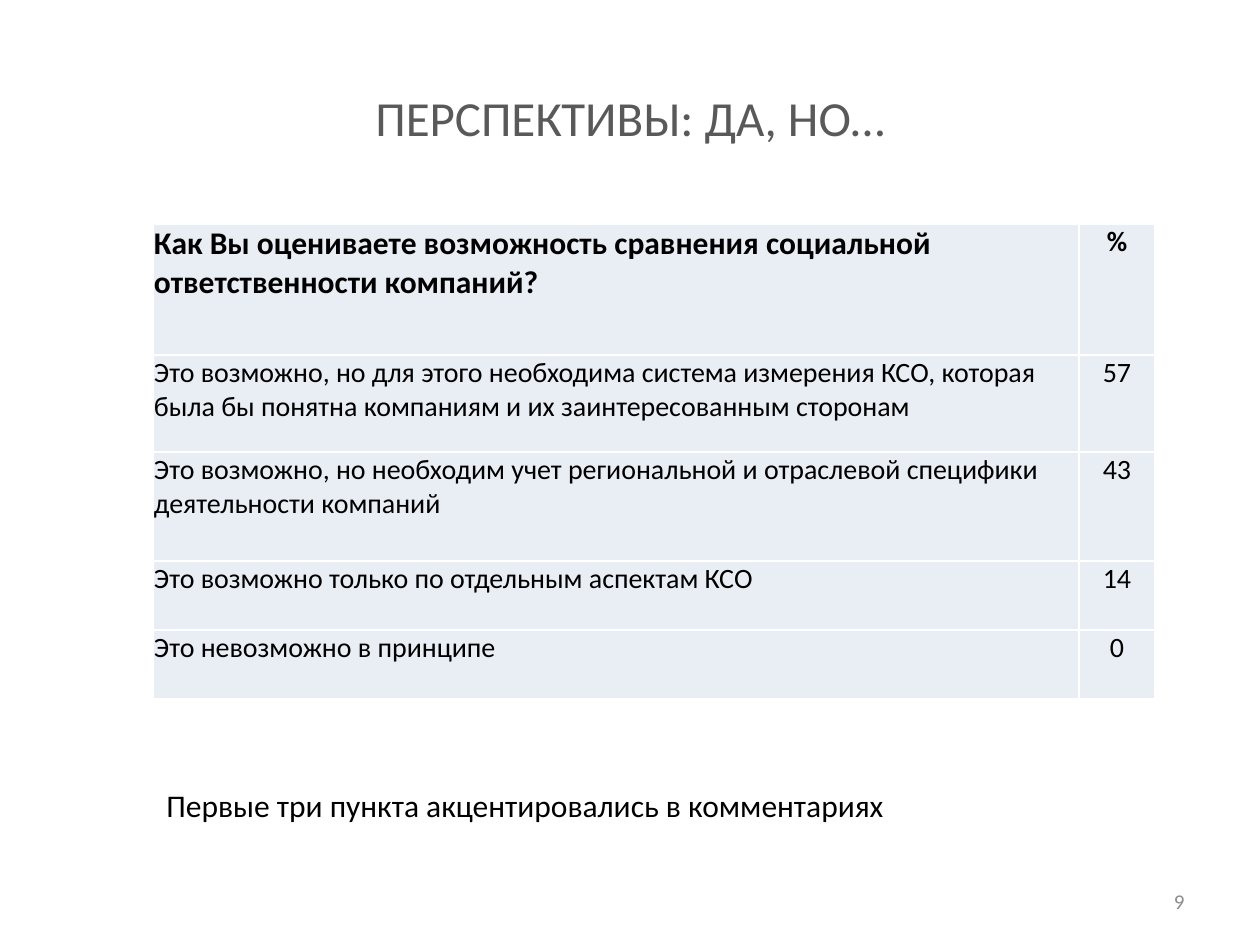
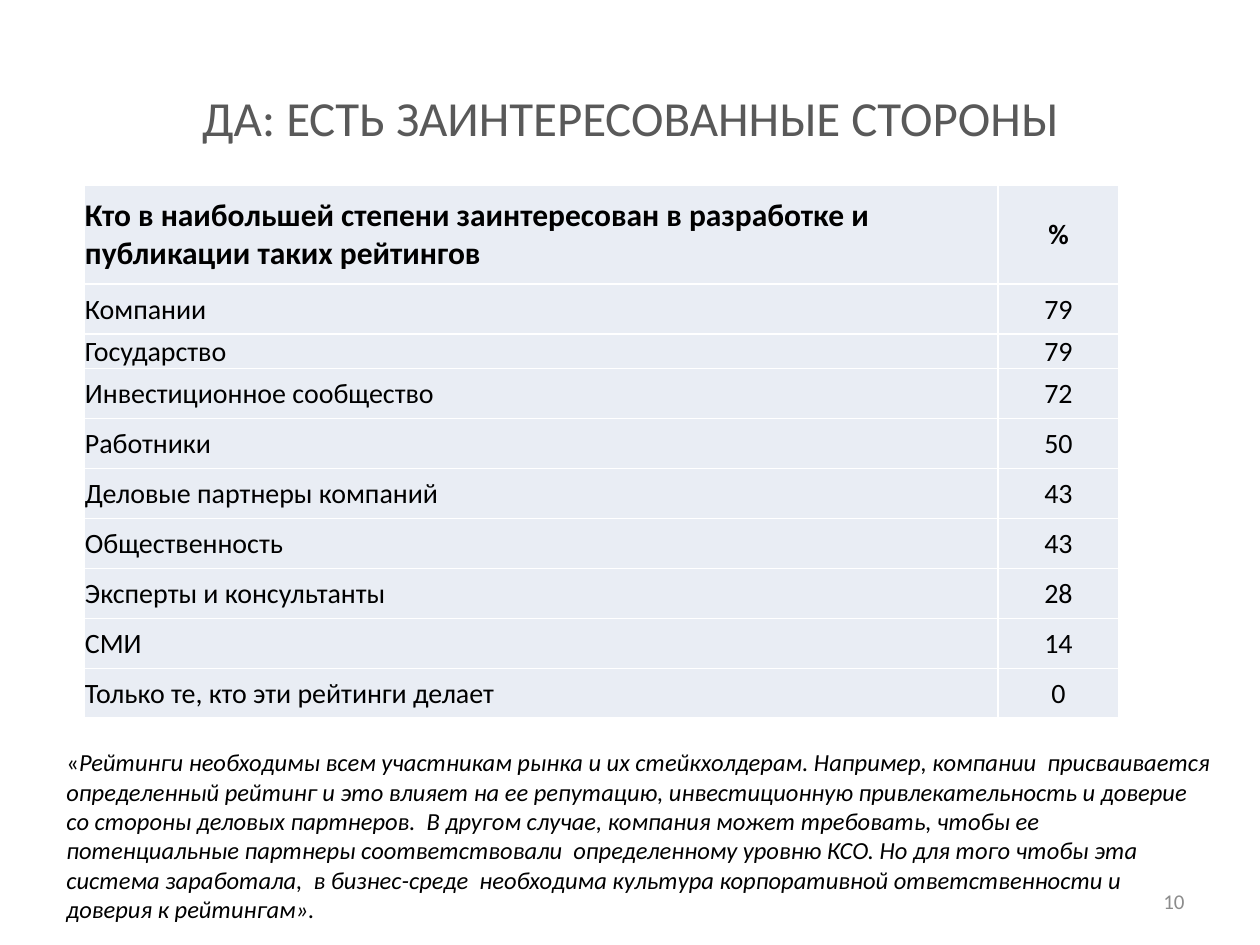
"""Build two survey slides, each with a title, a results table, a comment and a page number."""
from lxml import etree
from pptx import Presentation
from pptx import util as u
from pptx.dml import color
from pptx.enum import text
from pptx.oxml import ns

PX = 7257
FONT = "Calibri"
BLACK, TITLE_GREY, PAGE_GREY = "000000", "595959", "8C8C8C"
CELL_FILL, BORDER = "E9EDF4", "FFFFFF"
LEFT, CENTER, RIGHT = text.PP_ALIGN.LEFT, text.PP_ALIGN.CENTER, text.PP_ALIGN.RIGHT
TOP, MIDDLE = text.MSO_ANCHOR.TOP, text.MSO_ANCHOR.MIDDLE


def rgb(hex_value):
    return color.RGBColor.from_string(hex_value)


def write(frame, words, size=16, fill=BLACK, bold=False, italic=False, align=LEFT):
    paragraph = frame.paragraphs[0]
    paragraph.alignment = align
    run = paragraph.add_run()
    run.text = words
    run.font.name, run.font.size = FONT, u.Pt(size)
    run.font.bold, run.font.italic = bold, italic
    run.font.color.rgb = rgb(fill)


pages = [
    dict(
        number="9",
        title="ПЕРСПЕКТИВЫ: ДА, НО…",
        table_at=(153, 224),
        columns=(926, 76),
        heights=(131, 97, 109, 69, 69),
        anchor=TOP,
        rows=[
            ("Как Вы оцениваете возможность сравнения социальной ответственности компаний?", "%"),
            ("Это возможно, но для этого необходима система измерения КСО, которая была бы "
             "понятна компаниям и их заинтересованным сторонам", "57"),
            ("Это возможно, но необходим учет региональной и отраслевой специфики "
             "деятельности компаний", "43"),
            ("Это возможно только по отдельным аспектам КСО", "14"),
            ("Это невозможно в принципе", "0"),
        ],
        comment_at=(154, 780, 751, 50),
        comment_wrap=False,
        comment_size=18,
        comment=[("Первые три пункта акцентировались в комментариях", False)],
    ),
    dict(
        number="10",
        title="ДА: ЕСТЬ ЗАИНТЕРЕСОВАННЫЕ СТОРОНЫ",
        table_at=(84, 185),
        columns=(914, 121),
        heights=(99, 50, 6) + (50,) * 7,
        anchor=MIDDLE,
        rows=[
            ("Кто в наибольшей степени заинтересован в разработке и публикации таких рейтингов", "%"),
            ("Компании", "79"),
            ("Государство", "79"),
            ("Инвестиционное сообщество", "72"),
            ("Работники", "50"),
            ("Деловые партнеры компаний", "43"),
            ("Общественность", "43"),
            ("Эксперты и консультанты", "28"),
            ("СМИ", "14"),
            ("Только те, кто эти рейтинги делает", "0"),
        ],
        comment_at=(54, 741, 1171, 229),
        comment_wrap=True,
        comment_size=14,
        comment=[
            ("«", False),
            ("Рейтинги необходимы всем участникам рынка и их стейкхолдерам. Например, компании  "
             "присваивается определенный рейтинг и это влияет на ее репутацию, инвестиционную "
             "привлекательность и доверие со стороны деловых партнеров.  В другом случае, компания "
             "может требовать, чтобы ее потенциальные партнеры соответствовали  определенному "
             "уровню КСО. Но для того чтобы эта система заработала,  в бизнес-среде  необходима "
             "культура корпоративной ответственности и доверия к рейтингам».", True),
        ],
    ),
]

presentation = Presentation()
presentation.slide_width, presentation.slide_height = 1260 * PX, 945 * PX

for page in pages:
    slide = presentation.slides.add_slide(presentation.slide_layouts[6])

    left, top = page["table_at"]
    table = slide.shapes.add_table(
        len(page["rows"]), 2, left * PX, top * PX,
        sum(page["columns"]) * PX, sum(page["heights"]) * PX).table
    for column, width in zip(table.columns, page["columns"]):
        column.width = width * PX
    for row, height in zip(table.rows, page["heights"]):
        row.height = height * PX

    for row_index, answers in enumerate(page["rows"]):
        is_header = row_index == 0
        for column_index, words in enumerate(answers):
            cell = table.cell(row_index, column_index)
            cell.margin_left = cell.margin_right = cell.margin_top = PX
            cell.margin_bottom = 0
            cell.vertical_anchor = page["anchor"]
            properties = cell._tc.get_or_add_tcPr()
            for side in ("lnL", "lnR", "lnT", "lnB"):
                line = etree.SubElement(properties, ns.qn("a:" + side), w=str(u.Pt(1)))
                solid = etree.SubElement(line, ns.qn("a:solidFill"))
                etree.SubElement(solid, ns.qn("a:srgbClr"), val=BORDER)
            cell.fill.solid()
            cell.fill.fore_color.rgb = rgb(CELL_FILL)
            write(cell.text_frame, words, bold=is_header,
                  size=18 if is_header and column_index == 0 else 16,
                  align=CENTER if column_index else LEFT)

    comment = slide.shapes.add_textbox(*(n * PX for n in page["comment_at"])).text_frame
    comment.word_wrap = page["comment_wrap"]
    comment.auto_size = text.MSO_AUTO_SIZE.SHAPE_TO_FIT_TEXT
    for words, italic in page["comment"]:
        write(comment, words, size=page["comment_size"], italic=italic)

    for box, words, size, fill, align in (
        ((63, 38, 1134, 157), page["title"], 28, TITLE_GREY, CENTER),
        ((903, 876, 294, 50), page["number"], 12, PAGE_GREY, RIGHT),
    ):
        frame = slide.shapes.add_textbox(*(n * PX for n in box)).text_frame
        frame.word_wrap = True
        frame.vertical_anchor = MIDDLE
        write(frame, words, size=size, fill=fill, align=align)

presentation.save("out.pptx")
